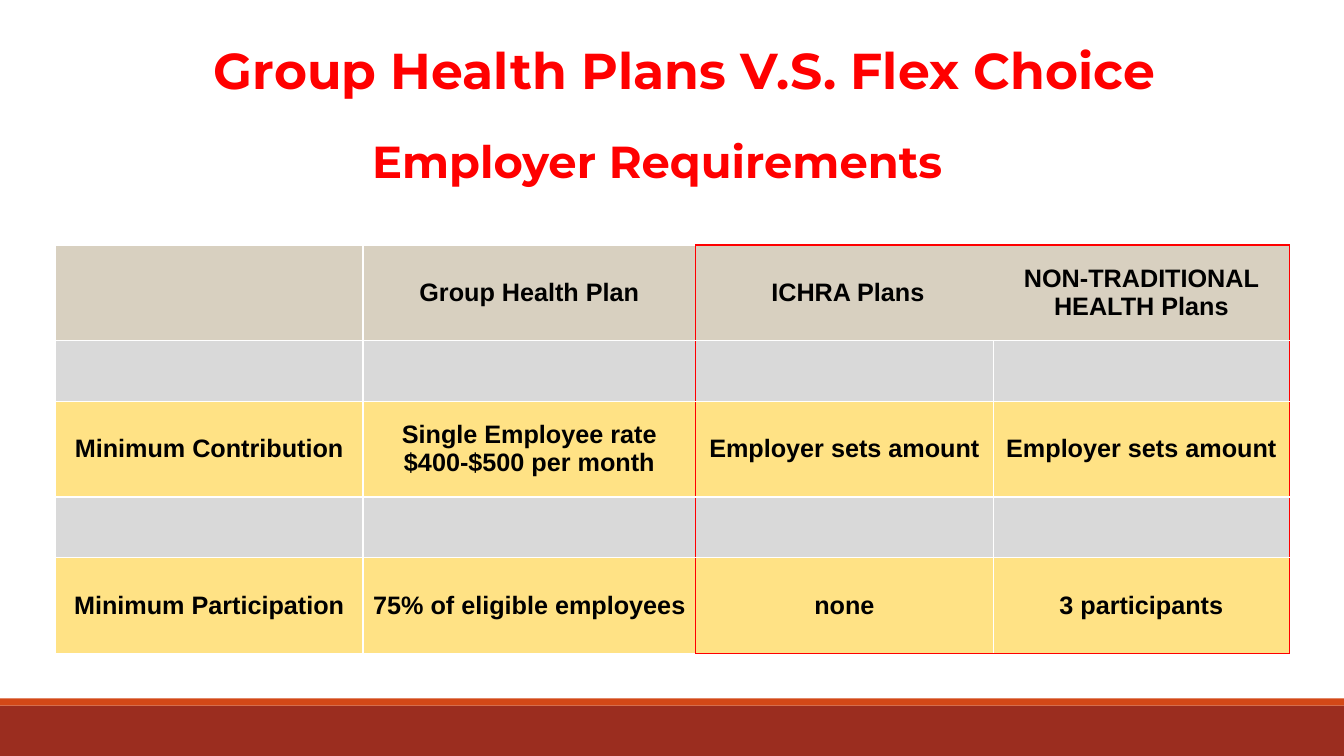
from dataclasses import dataclass

from lxml.etree import SubElement
from pptx import Presentation
from pptx.dml.color import RGBColor
from pptx.enum.shapes import MSO_SHAPE
from pptx.enum.text import MSO_ANCHOR, PP_ALIGN
from pptx.oxml.ns import qn
from pptx.util import Inches, Pt


@dataclass(frozen=True)
class Theme:
    red: str = "FF0000"
    white: str = "FFFFFF"
    black: str = "000000"
    footer: str = "9B2D1F"
    footer_line: str = "D34817"
    header_row: str = "D8D0C0"
    spacer_row: str = "D9D9D9"
    content_row: str = "FFE285"
    heading_font: str = "Montserrat"
    body_font: str = "Arial"
    title_size: int = 36
    subtitle_size: int = 32
    table_size: int = 18


theme = Theme()


def write_text(text_frame, text, *, size, font, color):
    """Write bold centred text, with a line break at each newline."""
    text_frame.word_wrap = True
    paragraph = text_frame.paragraphs[0]
    paragraph.alignment = PP_ALIGN.CENTER
    for index, line in enumerate(text.split("\n")):
        if index:
            paragraph.add_line_break()
        run = paragraph.add_run()
        run.text = line
        run.font.size = Pt(size)
        run.font.name = font
        run.font.bold = True
        run.font.color.rgb = RGBColor.from_string(color)


def set_borders(cell, **colors):
    """Draw the left, right, top and bottom borders; None leaves a side bare."""
    properties = cell._tc.get_or_add_tcPr()
    for side, tag in (("left", "lnL"), ("right", "lnR"), ("top", "lnT"), ("bottom", "lnB")):
        line = SubElement(properties, qn(f"a:{tag}"), w=str(Pt(1)))
        if colors[side]:
            fill = SubElement(line, qn("a:solidFill"))
            SubElement(fill, qn("a:srgbClr"), val=colors[side])
        else:
            SubElement(line, qn("a:noFill"))


presentation = Presentation()
presentation.slide_width = Inches(13.33)
presentation.slide_height = Inches(7.5)
slide = presentation.slides.add_slide(presentation.slide_layouts[6])

# Footer bands and the white panel behind the subtitle
for left, top, width, height, color in (
    (0, 7, 13.33, 0.5, theme.footer),
    (0, 6.93, 13.33, 0.07, theme.footer_line),
    (0.95, 1.67, 11.61, 0.52, theme.white),
):
    band = slide.shapes.add_shape(
        MSO_SHAPE.RECTANGLE, Inches(left), Inches(top), Inches(width), Inches(height)
    )
    band.shadow.inherit = False
    band.fill.solid()
    band.fill.fore_color.rgb = RGBColor.from_string(color)
    band.line.fill.background()

# Comparison table
rows = (
    (0.95, theme.header_row,
     ("", "Group Health Plan", " ICHRA Plans", "NON-TRADITIONAL HEALTH Plans")),
    (0.6, theme.spacer_row, ("",) * 4),
    (0.95, theme.content_row,
     ("Minimum Contribution", "Single Employee rate\n$400-$500 per month",
      "Employer sets amount", "Employer sets amount")),
    (0.6, theme.spacer_row, ("",) * 4),
    (0.95, theme.content_row,
     ("Minimum Participation", "75% of eligible employees", "none", "3 participants")),
)
column_widths = (3.05, 3.3, 2.95, 2.94)
last_row = len(rows) - 1

table = slide.shapes.add_table(
    len(rows), len(column_widths), Inches(0.55), Inches(2.43), Inches(12.23), Inches(4.04)
).table
table.first_row = False
table.horz_banding = False
for column, width in zip(table.columns, column_widths):
    column.width = Inches(width)

for row_index, (height, row_color, texts) in enumerate(rows):
    table.rows[row_index].height = Inches(height)
    # Vertical edges from left to right; a red frame surrounds the last two columns
    inner_edge = None if row_index == 0 else theme.white
    edges = (theme.white, theme.white, theme.red, inner_edge, theme.red)
    for column_index, text in enumerate(texts):
        cell = table.cell(row_index, column_index)
        frame_color = theme.red if column_index >= 2 else theme.white
        set_borders(
            cell,
            left=edges[column_index],
            right=edges[column_index + 1],
            top=frame_color if row_index == 0 else theme.white,
            bottom=frame_color if row_index == last_row else theme.white,
        )
        cell.fill.solid()
        cell.fill.fore_color.rgb = RGBColor.from_string(row_color)
        if text:
            cell.vertical_anchor = MSO_ANCHOR.MIDDLE
            cell.margin_left = cell.margin_right = Inches(0.1)
            cell.margin_top = cell.margin_bottom = Inches(0.1)
            write_text(cell.text_frame, text, size=theme.table_size,
                       font=theme.body_font, color=theme.black)

# Headings
for left, top, width, height, text, size in (
    (1.62, 0.34, 10.48, 0.71, "Group Health Plans V.S. Flex Choice ", theme.title_size),
    (3.01, 1.28, 7.02, 0.64, "Employer Requirements", theme.subtitle_size),
):
    heading = slide.shapes.add_textbox(
        Inches(left), Inches(top), Inches(width), Inches(height)
    )
    write_text(heading.text_frame, text, size=size,
               font=theme.heading_font, color=theme.red)

presentation.save("out.pptx")
